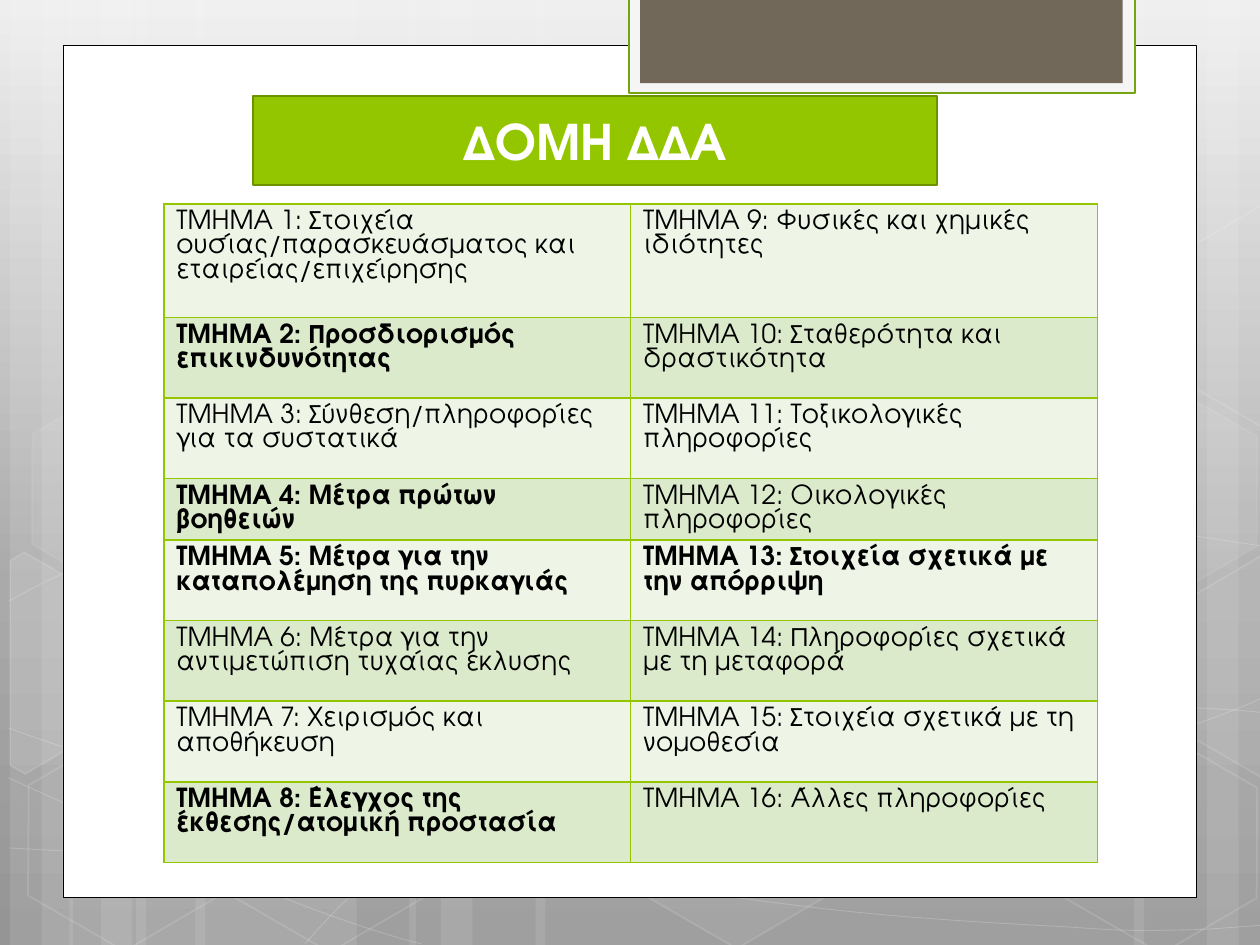
from copy import deepcopy
from math import cos, radians, sin

from lxml.etree import SubElement
from pptx import Presentation
from pptx.dml.color import RGBColor
from pptx.enum.shapes import MSO_SHAPE
from pptx.enum.text import MSO_ANCHOR, PP_ALIGN
from pptx.oxml.ns import qn
from pptx.util import Inches, Pt

WHITE = RGBColor(0xFF, 0xFF, 0xFF)
BLACK = RGBColor(0, 0, 0)
GREEN = RGBColor(0x94, 0xC6, 0x00)
DARK_GREEN = RGBColor(0x6D, 0x92, 0x00)
TAB_GREEN = RGBColor(0x74, 0xA5, 0x10)
TAB_GREY = RGBColor(0xF5, 0xF5, 0xF5)
BROWN = RGBColor(0x71, 0x68, 0x5A)
BANDS = [RGBColor(0xEE, 0xF5, 0xE7), RGBColor(0xDC, 0xEA, 0xCC)]
BACKGROUND = [(0, RGBColor(0xEE, 0xEE, 0xEE)), (0.62, RGBColor(0xAA, 0xAA, 0xAA)),
              (1, RGBColor(0x95, 0x95, 0x95))]

# Left edge, width and rotation of the full-height light strips
STRIPS = [(1.08, 1.75, 0), (0.08, 0.5, 0), (0.33, 0.83, 0), (1.55, 1.75, 0), (0.55, 0.5, 0),
          (0.8, 0.83, 0), (7.33, 1.75, 180), (9.58, 0.5, 180), (9, 0.83, 180),
          (4.25, 3.08, 0), (3.25, 0.5, 0), (3.5, 0.83, 0)]

# Start point, then line ends (2 numbers) or Bezier segments (6 numbers)
CURVES = [
    [(0.07, 6.73), (0.61, 6.76, 1.15, 6.79, 1.9, 6.78), (2.65, 6.77, 3.58, 6.75, 4.58, 6.65),
     (5.58, 6.55, 7, 6.36, 7.92, 6.17), (8.83, 5.98, 9.77, 5.68, 10.07, 5.51)],
    [(0.07, 4.77), (0.36, 4.61, 0.65, 4.46, 1.21, 4.31), (1.78, 4.16, 2.59, 3.94, 3.47, 3.87),
     (4.36, 3.8, 5.44, 3.79, 6.54, 3.87), (7.64, 3.95, 9.47, 4.26, 10.07, 4.34)],
    [(0.06, 6.17), (1.27, 6.72, 2.47, 7.27, 3.34, 7.49)],
    [(0.07, 5.78), (0.38, 5.89, 0.7, 6, 1.28, 6.16), (1.86, 6.31, 2.73, 6.56, 3.57, 6.73),
     (4.4, 6.9, 5.45, 7.08, 6.28, 7.18), (7.11, 7.29, 8, 7.33, 8.53, 7.36),
     (9.05, 7.4, 9.19, 7.38, 9.45, 7.38), (9.71, 7.37, 9.89, 7.35, 10.07, 7.34)],
    [(2.42, 7.49), (2.6, 7.29, 2.78, 7.09, 3.02, 6.91), (3.26, 6.73, 3.6, 6.53, 3.88, 6.39),
     (4.16, 6.25, 4.33, 6.19, 4.7, 6.09), (5.06, 5.99, 5.73, 5.85, 6.08, 5.78),
     (6.44, 5.71, 6.49, 5.71, 6.8, 5.69), (7.11, 5.66, 7.6, 5.63, 7.94, 5.62),
     (8.29, 5.61, 8.86, 5.62, 8.86, 5.62), (9.53, 5.62),
     (9.71, 5.63, 9.88, 5.64, 9.97, 5.65), (10.06, 5.66, 10.03, 5.65, 10.06, 5.66)],
]

HEXAGON_TURN = 30
# Left, top, fill opacity (None for no fill), line opacity
HEXAGONS = [(3.34, 0.36, 4, 8), (4.97, 5.89, 6, 12), (0.11, 5.91, None, 12),
            (0.14, 3.12, 7, 8), (1.74, 5.92, None, 12), (7.53, 4.53, 10, 12),
            (8.34, 5.93, None, 12), (8.34, 3.14, 7, 8)]

# Hexagons cut off by the slide edge: fill opacity, centre of turning and turned corners
CUT_HEXAGONS = [
    (10, (0.36, 5.35),
     [(0.08, 4.45), (0.19, 4.38), (0.96, 4.82), (0.95, 5.7), (0.2, 6.14), (0.08, 6.07)]),
    (4, (9.85, 5.2),
     [(9.26, 4.85), (10.01, 4.41), (10.09, 4.46), (10.09, 6.13), (10.02, 6.17), (9.26, 5.73)]),
    (None, (9.85, 2.41),
     [(9.26, 2.07), (10.01, 1.63), (10.1, 1.68), (10.09, 3.35), (10.02, 3.39), (9.26, 2.95)]),
]

ROW_HEIGHTS = [0.9, 0.64, 0.64, 0.46, 0.64, 0.64, 0.64, 0.64]
BOLD_SECTIONS = {2, 4, 5, 8, 13}
SECTIONS = [
    "Στοιχεία ουσίας/παρασκευάσματος και εταιρείας/επιχείρησης",
    "Προσδιορισμός επικινδυνότητας",
    "Σύνθεση/πληροφορίες για τα συστατικά",
    "Μέτρα πρώτων βοηθειών",
    "Μέτρα για την καταπολέμηση της πυρκαγιάς",
    "Μέτρα για την αντιμετώπιση τυχαίας έκλυσης",
    "Χειρισμός και αποθήκευση",
    "Έλεγχος της έκθεσης/ατομική προστασία",
    "Φυσικές και χημικές ιδιότητες",
    "Σταθερότητα και δραστικότητα",
    "Τοξικολογικές πληροφορίες",
    "Οικολογικές πληροφορίες",
    "Στοιχεία σχετικά με την απόρριψη",
    "Πληροφορίες σχετικά με τη μεταφορά",
    "Στοιχεία σχετικά με τη νομοθεσία",
    "Άλλες πληροφορίες",
]


def turn_back(point, centre, degrees):
    """Undo a clockwise turn about the centre."""
    dx, dy = point[0] - centre[0], point[1] - centre[1]
    c, s = cos(radians(degrees)), sin(radians(degrees))
    return centre[0] + c * dx + s * dy, centre[1] - s * dx + c * dy


class SlideBuilder:
    font = "TeX Gyre Adventor"

    def __init__(self, slide):
        self.slide = slide
        self.shapes = slide.shapes

    def background(self, stops):
        fill = self.slide.background.fill
        fill.gradient()
        fill.gradient_angle = 270
        stop_list = self.slide.element.find(".//" + qn("a:gsLst"))
        while len(stop_list) < len(stops):
            stop_list.append(deepcopy(stop_list[0]))
        for stop, (position, color) in zip(fill.gradient_stops, stops):
            stop.position = position
            stop.color.rgb = color

    def paint(self, fill, color, opacity=100):
        """Fill solidly, or not at all when the colour or opacity is None."""
        if color is None or opacity is None:
            fill.background()
            return
        fill.solid()
        fill.fore_color.rgb = color
        if opacity < 100:
            color_element = fill._xPr.find(qn("a:solidFill"))[0]
            SubElement(color_element, qn("a:alpha"), val=str(opacity * 1000))

    def style(self, shape, fill=None, line=None, width=1, fill_opacity=100, line_opacity=100):
        shape.shadow.inherit = False
        self.paint(shape.fill, fill, fill_opacity)
        self.paint(shape.line.fill, line, line_opacity)
        if line is not None:
            shape.line.width = Pt(width)

    def preset(self, kind, box, rotation=0, **style):
        shape = self.shapes.add_shape(kind, *map(Inches, box))
        shape.rotation = rotation
        self.style(shape, **style)
        return shape

    def outline(self, segments, close=False, rotation=0, **style):
        """Draw segments: each after the first is a line end or a Bezier triple."""
        points = [(Inches(x), Inches(y)) for segment in segments
                  for x, y in zip(segment[::2], segment[1::2])]
        builder = self.shapes.build_freeform(*points[0])
        builder.add_line_segments(points[1:], close=close)
        shape = builder.convert_to_shape()
        lines = iter(shape._element.findall(".//" + qn("a:lnTo")))
        for segment in segments[1:]:
            first = next(lines)
            if len(segment) == 6:
                first.addprevious(curve := first.makeelement(qn("a:cubicBezTo")))
                for line in (first, next(lines), next(lines)):
                    curve.append(line[0])
                    line.getparent().remove(line)
        shape.rotation = rotation
        self.style(shape, **style)

    def text(self, paragraph, text, **formats):
        run = paragraph.add_run()
        run.text = text
        run.font.color.rgb = formats.pop("color")
        for name, value in {"name": self.font, **formats}.items():
            setattr(run.font, name, value)

    def title(self, text, box):
        title = self.shapes.title
        for name, value in zip(("left", "top", "width", "height"), box):
            setattr(title, name, Inches(value))
        # Bring the title in front of the panel
        self.shapes._spTree.append(title._element)
        self.paint(title.fill, GREEN)
        title.line.color.rgb = DARK_GREEN
        title.line.width = Pt(1.25)
        title.text_frame.vertical_anchor = MSO_ANCHOR.MIDDLE
        paragraph = title.text_frame.paragraphs[0]
        paragraph.alignment = PP_ALIGN.CENTER
        self.text(paragraph, text, size=Pt(28), bold=True, color=WHITE)

    def borders(self, cell, color):
        properties = cell._tc.get_or_add_tcPr()
        for side in ("lnL", "lnR", "lnT", "lnB"):
            line = SubElement(properties, qn("a:" + side), w=str(Pt(1)))
            SubElement(SubElement(line, qn("a:solidFill")), qn("a:srgbClr"), val=str(color))

    def section_table(self, sections, box, heights):
        rows = len(heights)
        table = self.shapes.add_table(rows, 2, *map(Inches, box)).table
        for row, height in zip(table.rows, heights):
            row.height = Inches(height)
        for index, section in enumerate(sections):
            column, row = divmod(index, rows)
            cell = table.cell(row, column)
            self.borders(cell, GREEN)
            self.paint(cell.fill, BANDS[row % 2])
            paragraph = cell.text_frame.paragraphs[0]
            paragraph.line_spacing = Pt(13.9)
            number = index + 1
            self.text(paragraph, f"ΤΜΗΜΑ {number}: {section}", size=Pt(15),
                      bold=number in BOLD_SECTIONS, color=BLACK)


def main():
    presentation = Presentation()
    presentation.slide_width, presentation.slide_height = Inches(10), Inches(7.5)
    builder = SlideBuilder(presentation.slides.add_slide(presentation.slide_layouts[5]))
    builder.background(BACKGROUND)
    for left, width, turn in STRIPS:
        builder.preset(MSO_SHAPE.RECTANGLE, (left, 0, width, 7.5), turn, fill=WHITE, fill_opacity=10)
    for curve in CURVES:
        builder.outline(curve, line=WHITE, width=0.5, line_opacity=20)
    for left, top, fill_opacity, line_opacity in HEXAGONS:
        hexagon = builder.preset(MSO_SHAPE.HEXAGON, (left, top, 1.75, 1.52), HEXAGON_TURN, fill=WHITE,
                                 line=WHITE, fill_opacity=fill_opacity, line_opacity=line_opacity)
        hexagon.adjustments[0] = 0.285
    for fill_opacity, centre, corners in CUT_HEXAGONS:
        flat = [turn_back(corner, centre, HEXAGON_TURN) for corner in corners]
        builder.outline(flat, True, HEXAGON_TURN, fill=WHITE, line=WHITE,
                        fill_opacity=fill_opacity, line_opacity=12)
    builder.preset(MSO_SHAPE.RECTANGLE, (0.5, 0.36, 9, 6.76), fill=WHITE, line=BLACK, width=0.5)
    builder.preset(MSO_SHAPE.RECTANGLE, (4.99, -0.02, 4.02, 0.76), fill=TAB_GREY, line=TAB_GREEN,
                   width=1.25)
    builder.preset(MSO_SHAPE.RECTANGLE, (5.08, -0.02, 3.83, 0.68), fill=BROWN)
    builder.section_table(SECTIONS, (1.3, 1.62, 7.41, 5.34), ROW_HEIGHTS)
    builder.title("ΔΟΜΗ ΔΔΑ", (2.01, 0.76, 5.43, 0.71))
    presentation.save("out.pptx")


if __name__ == "__main__":
    main()
